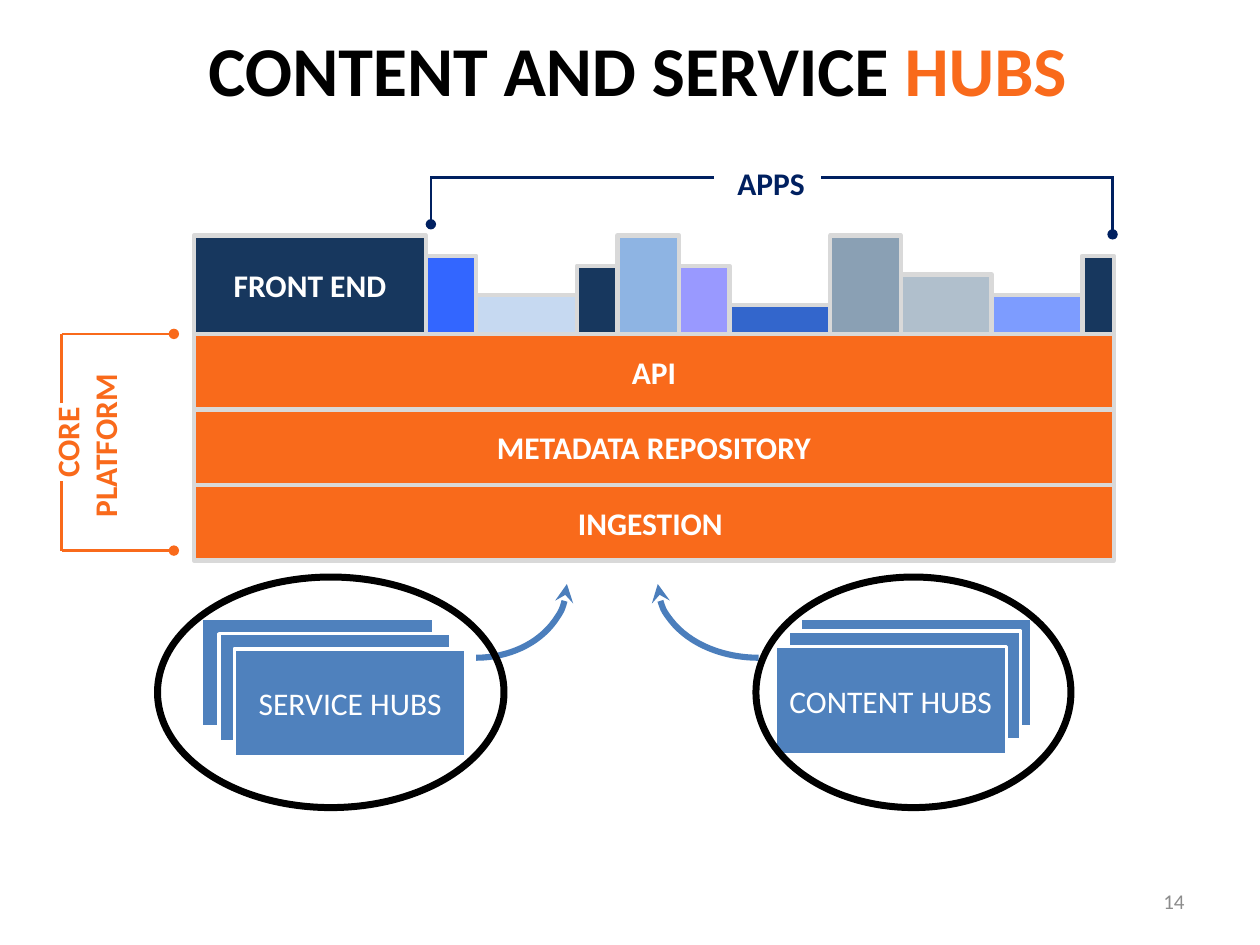
from lxml.etree import SubElement
from pptx import Presentation
from pptx.dml.color import RGBColor
from pptx.enum.shapes import MSO_CONNECTOR, MSO_SHAPE
from pptx.enum.text import MSO_ANCHOR, PP_ALIGN
from pptx.oxml.ns import qn
from pptx.util import Emu, Pt

PX = 9144
COLORS = {
    "white": "FFFFFF", "black": "000000", "gray": "8C8C8C", "border": "D9D9D9",
    "orange": "F96A1B", "navy": "17375E", "ink": "002060", "hub": "4F81BD",
    "arrow": "4B7EBC", "royal": "3366FF", "ice": "C6D9F1", "sky": "8EB4E3",
    "violet": "9999FF", "cobalt": "3366CC", "slate": "8AA0B4",
    "silver": "B0BFCC", "periwinkle": "7D9CFF",
}
LAYERS = ["API", "METADATA REPOSITORY", "INGESTION "]
APPS = [
    (40, 62, "royal"), (80, 31, "ice"), (32, 54, "navy"), (49, 78, "sky"),
    (40, 54, "violet"), (80, 23, "cobalt"), (56, 78, "slate"),
    (72, 47, "silver"), (72, 31, "periwinkle"), (25, 62, "navy"),
]
HUBS = [
    ("SERVICE HUBS", [(160, 491), (174, 503), (186, 515)]),
    ("CONTENT HUBS", [(635, 491), (626, 501), (615, 513)]),
]
LEFT, TOP, WIDTH, ROW = 154, 265, 730, 60


class SlideBuilder:
    font = "Calibri"

    def __init__(self, page):
        self.page = page

    def color(self, name):
        return RGBColor.from_string(COLORS[name])

    def lengths(self, *values):
        return [Emu(value * PX) for value in values]

    def set_text(self, frame, spans, size, bold, align, anchor):
        frame.word_wrap = True
        frame.vertical_anchor = anchor
        para = frame.paragraphs[0]
        para.alignment = align
        para.font.name = self.font
        para.font.size = Pt(size)
        para.font.bold = bold
        for words, color in spans:
            span = para.add_run()
            span.text = words
            span.font.color.rgb = self.color(color)

    def text(self, at, spans, size=18, bold=True, align=PP_ALIGN.CENTER,
             anchor=MSO_ANCHOR.TOP, rotation=0):
        box = self.page.shapes.add_textbox(*self.lengths(*at))
        box.rotation = rotation
        self.set_text(box.text_frame, spans, size, bold, align, anchor)
        return box

    def shape(self, kind, at, fill, line, weight):
        shape = self.page.shapes.add_shape(kind, *self.lengths(*at))
        shape.shadow.inherit = False
        if fill:
            shape.fill.solid()
            shape.fill.fore_color.rgb = self.color(fill)
        else:
            shape.fill.background()
        shape.line.color.rgb = self.color(line)
        shape.line.width = Pt(weight)
        return shape

    def block(self, at, fill, words="", line="border", weight=2.5, bold=True):
        block = self.shape(MSO_SHAPE.RECTANGLE, at, fill, line, weight)
        if words:
            self.set_text(block.text_frame, [(words, "white")], 18, bold,
                          PP_ALIGN.CENTER, MSO_ANCHOR.MIDDLE)

    def ring(self, at):
        self.shape(MSO_SHAPE.OVAL, at, None, "black", 4)

    def tip(self, shape, kind):
        outline = shape._element.spPr.find(qn("a:ln"))
        SubElement(outline, qn("a:tailEnd"), type=kind)

    def arc(self, at, flipped=False):
        arc = self.shape(MSO_SHAPE.ARC, at, None, "arrow", 3.5)
        arc.rotation = 180
        if flipped:
            arc._element.spPr.find(qn("a:xfrm")).set("flipH", "1")
        self.tip(arc, "stealth")

    def line(self, start, end, color, dot=False):
        line = self.page.shapes.add_connector(
            MSO_CONNECTOR.STRAIGHT, *self.lengths(*start, *end))
        line.line.color.rgb = self.color(color)
        line.line.width = Pt(1.5)
        if dot:
            self.tip(line, "oval")
        SubElement(line._element.spPr, qn("a:effectLst"))


def main():
    deck = Presentation()
    deck.slide_width, deck.slide_height = Emu(1000 * PX), Emu(750 * PX)
    builder = SlideBuilder(deck.slides.add_slide(deck.slide_layouts[6]))

    builder.text((717, 695, 233, 40), [("14", "gray")], 12, False,
                 PP_ALIGN.RIGHT, MSO_ANCHOR.MIDDLE)

    for name, corners in HUBS:
        for corner in corners:
            words = name if corner == corners[-1] else ""
            builder.block((*corner, 184, 86), "hub", words, "white", 2, False)
    builder.arc((522, 405, 160, 117))
    builder.arc((306, 405, 144, 117), flipped=True)

    builder.text((-11, 317, 156, 68), [("CORE PLATFORM ", "orange")],
                 rotation=270)
    for outer, inner in ((437, 382), (265, 320)):
        builder.line((49, outer), (138, outer), "orange", dot=True)
        builder.line((49, inner), (49, outer), "orange")

    for row, words in reversed(list(enumerate(LAYERS))):
        builder.block((LEFT, TOP + row * ROW, WIDTH, ROW), "orange", words)
    builder.block((LEFT, TOP - 78, 184, 78), "navy", "FRONT END")
    left = LEFT + 184
    for width, height, color in APPS:
        builder.block((left, TOP - height, width, height), color)
        left += width

    builder.text((556, 125, 112, 38), [("APPS", "ink")])
    for outer, inner, bottom in ((342, 567, 178), (883, 652, 186)):
        builder.line((outer, 140), (outer, bottom), "ink", dot=True)
        builder.line((outer, 141), (inner, 141), "ink")

    builder.ring((125, 458, 275, 183))
    builder.ring((600, 458, 250, 183))

    title = builder.text(
        (158, 17, 696, 75),
        [("CONTENT AND SERVICE ", "black"), ("HUBS", "orange")],
        40, anchor=MSO_ANCHOR.MIDDLE).text_frame
    title.word_wrap = False
    title.margin_left = title.margin_right = Emu(4 * PX)
    title.margin_top = title.margin_bottom = Emu(4 * PX)

    deck.save("out.pptx")


if __name__ == "__main__":
    main()
